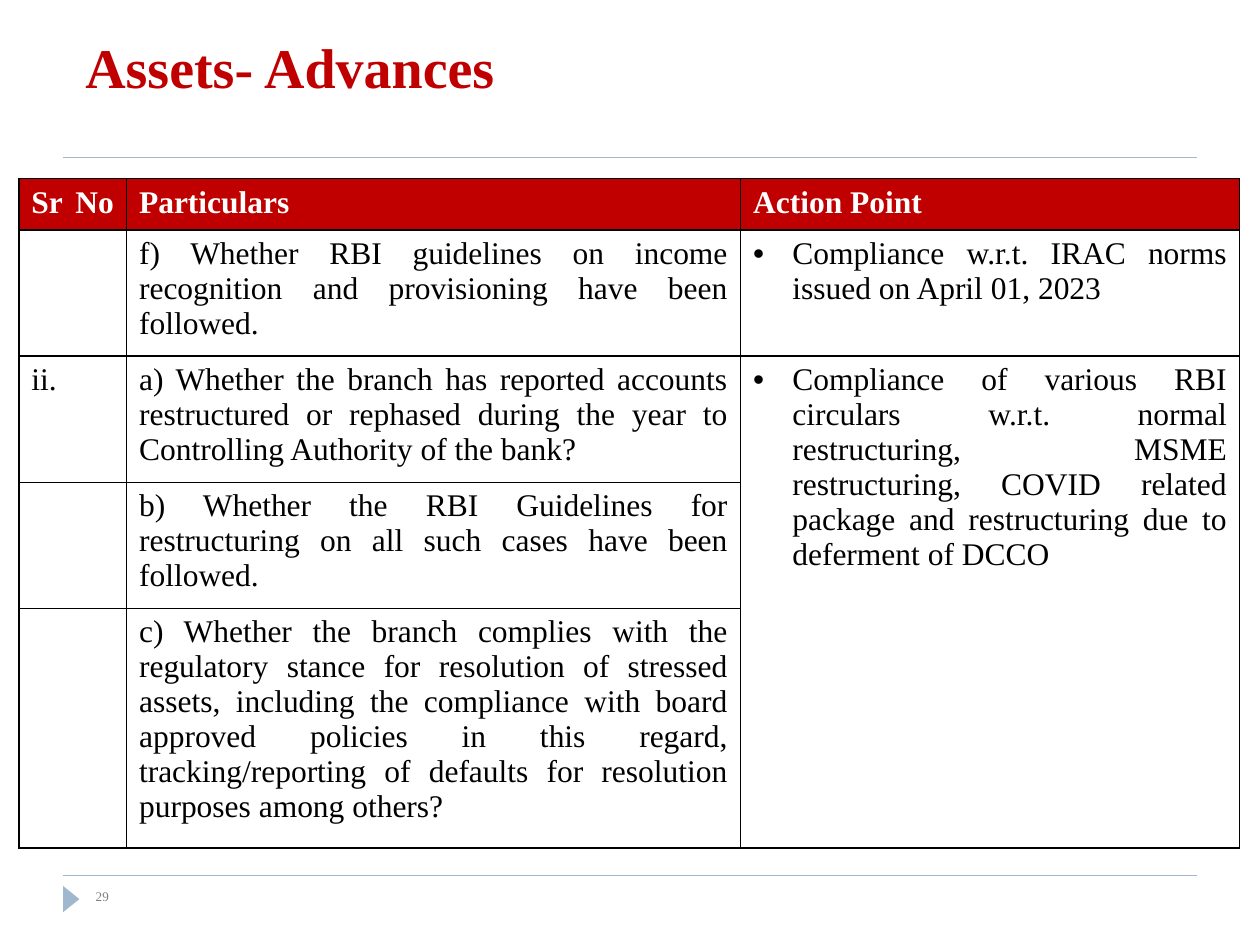
import lxml.etree
import pptx
import pptx.dml.color
import pptx.enum.shapes
import pptx.enum.text
import pptx.oxml.ns
import pptx.util

Cm = pptx.util.Cm
qn = pptx.oxml.ns.qn
ALIGN = pptx.enum.text.PP_ALIGN
ANCHOR = pptx.enum.text.MSO_ANCHOR
COLORS = {"red": "C00000", "blue": "9FB8CD", "gray": "808080", "black": "000000", "white": "FFFFFF"}
HEADER = ["Sr No ", "Particulars", "Action Point"]
ROWS = [
    ["", "f) Whether RBI guidelines on income recognition and provisioning have been followed. ",
     "Compliance w.r.t. IRAC norms issued on April 01, 2023"],
    ["ii.", "a) Whether the branch has reported accounts restructured or rephased during the year to "
     "Controlling Authority of the bank?",
     "Compliance of various RBI circulars w.r.t. normal restructuring, MSME restructuring, "
     "COVID related package and restructuring due to deferment of DCCO"],
    ["", "b) Whether the RBI Guidelines for restructuring on all such cases have been followed. ", ""],
    ["", "c) Whether the branch complies with the regulatory stance for resolution of stressed assets, "
     "including the compliance with board approved policies in this regard, tracking/reporting of "
     "defaults for resolution purposes among others? ", ""],
]


def rgb(name):
    return pptx.dml.color.RGBColor.from_string(COLORS[name])


def write(tf, text, size=18, color="black", bold=False, align=ALIGN.LEFT, bullet=False):
    p = tf.paragraphs[0]
    p.alignment = align
    if bullet:
        pPr = p._p.get_or_add_pPr()
        pPr.set("marL", str(Cm(0.79)))
        pPr.set("indent", str(-Cm(0.79)))
        lxml.etree.SubElement(pPr, qn("a:buFont")).set("typeface", "Arial")
        lxml.etree.SubElement(pPr, qn("a:buChar")).set("char", "•")
    r = p.add_run()
    r.text = text
    r.font.name = "Times New Roman"
    r.font.size = pptx.util.Pt(size)
    r.font.bold = bold
    r.font.color.rgb = rgb(color)


class SlideBuilder:
    """Draws styled elements on one slide."""

    def __init__(self, s):
        self.s = s

    def rule(self, y):
        line = self.s.shapes.add_connector(
            pptx.enum.shapes.MSO_CONNECTOR.STRAIGHT, Cm(1.27), Cm(y), Cm(24.13), Cm(y))
        line.line.color.rgb = rgb("blue")
        line.line.width = pptx.util.Pt(0.75)
        lxml.etree.SubElement(line._element.spPr, qn("a:effectLst"))

    def marker(self, x, y, w, h):
        sp = self.s.shapes.add_shape(
            pptx.enum.shapes.MSO_SHAPE.ISOSCELES_TRIANGLE, Cm(x), Cm(y), Cm(w), Cm(h))
        sp.rotation = 90
        sp.shadow.inherit = False
        sp.fill.solid()
        sp.fill.fore_color.rgb = rgb("blue")
        sp.line.fill.background()

    def text(self, text, x, y, w, h, anchor=ANCHOR.TOP, **style):
        tf = self.s.shapes.add_textbox(Cm(x), Cm(y), Cm(w), Cm(h)).text_frame
        tf.word_wrap = True
        tf.vertical_anchor = anchor
        write(tf, text, **style)

    def cell(self, cell, text, header=False, bullet=False):
        tcPr = cell._tc.get_or_add_tcPr()
        for side in ("lnL", "lnR", "lnT", "lnB"):
            ln = lxml.etree.SubElement(tcPr, qn(f"a:{side}"))
            ln.set("w", str(pptx.util.Pt(1)))
            fill = lxml.etree.SubElement(ln, qn("a:solidFill"))
            lxml.etree.SubElement(fill, qn("a:srgbClr")).set("val", COLORS["black"])
        if header:
            cell.fill.solid()
            cell.fill.fore_color.rgb = rgb("red")
        else:
            cell.fill.background()
        if text:
            write(cell.text_frame, text, color="white" if header else "black",
                  bold=header, align=ALIGN.JUSTIFY, bullet=bullet)

    def table(self, rows, x, y, widths, heights):
        table = self.s.shapes.add_table(
            len(rows), len(widths), Cm(x), Cm(y), Cm(sum(widths)), Cm(sum(heights))).table
        table.horz_banding = False
        for column, width in zip(table.columns, widths):
            column.width = Cm(width)
        for row, height in zip(table.rows, heights):
            row.height = Cm(height)
        for i, row in enumerate(rows):
            for j, text in enumerate(row):
                self.cell(table.cell(i, j), text, header=i == 0, bullet=i > 0 and j == 2)
        return table


def main():
    prs = pptx.Presentation()
    prs.slide_width, prs.slide_height = Cm(25.4), Cm(19.05)
    slide = SlideBuilder(prs.slides.add_slide(prs.slide_layouts[6]))
    for y in (17.65, 3.17):
        slide.rule(y)
    slide.marker(1.17, 17.96, 0.53, 0.33)
    slide.text("Assets- Advances", 1.47, 0.43, 22.86, 1.7, anchor=ANCHOR.BOTTOM,
               size=32, color="red", bold=True)
    slide.text("29", 1.68, 17.78, 11, 0.76, size=7.5, color="gray")
    table = slide.table([HEADER] + ROWS, 0.38, 3.6, [2.17, 12.38, 10.06],
                        [1.04, 2.36, 2.36, 2.36, 4.47])
    table.cell(2, 2).merge(table.cell(4, 2))
    prs.save("out.pptx")


if __name__ == "__main__":
    main()
